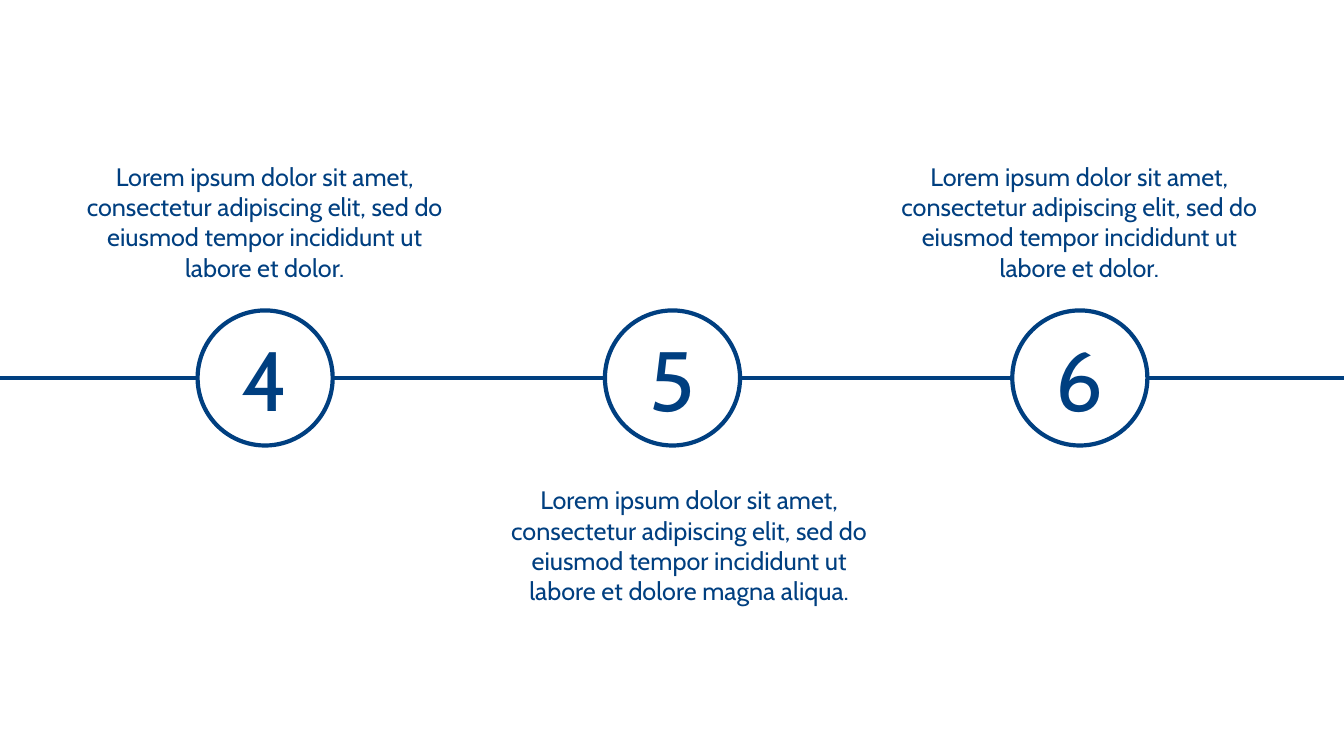
from lxml import etree
from pptx import Presentation
from pptx.dml.color import RGBColor
from pptx.enum.shapes import MSO_CONNECTOR, MSO_SHAPE
from pptx.enum.text import MSO_ANCHOR, MSO_AUTO_SIZE, PP_ALIGN
from pptx.oxml.ns import qn
from pptx.util import Inches, Pt

STRAIGHT = MSO_CONNECTOR.STRAIGHT
OVAL = MSO_SHAPE.OVAL
MIDDLE = MSO_ANCHOR.MIDDLE
GROW = MSO_AUTO_SIZE.SHAPE_TO_FIT_TEXT
CENTER = PP_ALIGN.CENTER

SLIDE_WIDTH, SLIDE_HEIGHT = 13.33, 7.5
AXIS_Y = SLIDE_HEIGHT / 2
DIAMETER = 1.34
FIRST_LEFT, STEP_PITCH = 1.96, 4.04
CAPTION_WIDTH, CAPTION_HEIGHT = 4.01, 1.36
ABOVE, BELOW = 1.55, 4.76

OPENING = ("Lorem ipsum dolor sit amet, consectetur adipiscing elit, "
           "sed do eiusmod tempor incididunt ut labore et ")
# Number, caption, caption left, caption top
STEPS = [
    ("4", OPENING + "dolor.", 0.62, ABOVE),
    ("5", OPENING + "dolore magna aliqua.", 4.83, BELOW),
    ("6", OPENING + "dolor.", 8.7, ABOVE),
]


def color(hex_code):
    return RGBColor.from_string(hex_code)


class Timeline:
    FONT = "Cabin"
    NAVY = "003F80"
    WHITE = "FFFFFF"
    STROKE = 3

    def __init__(self, slide):
        self.slide = slide
        background = slide.background.fill
        background.solid()
        background.fore_color.rgb = color(self.WHITE)

    def add_words(self, frame, words, size):
        frame.word_wrap = True
        paragraph = frame.paragraphs[0]
        paragraph.alignment = CENTER
        run = paragraph.add_run()
        run.text = words
        run.font.name = self.FONT
        run.font.size = Pt(size)
        run.font.color.rgb = color(self.NAVY)

    def stroke(self, line):
        line.color.rgb = color(self.NAVY)
        line.width = Pt(self.STROKE)

    def axis(self, y):
        axis = self.slide.shapes.add_connector(
            STRAIGHT, 0, Inches(y), Inches(SLIDE_WIDTH), Inches(y))
        self.stroke(axis.line)
        etree.SubElement(axis._element.spPr, qn("a:effectLst"))

    def marker(self, number, left, top):
        marker = self.slide.shapes.add_shape(
            OVAL, Inches(left), Inches(top), Inches(DIAMETER), Inches(DIAMETER))
        marker.shadow.inherit = False
        marker.fill.solid()
        marker.fill.fore_color.rgb = color(self.WHITE)
        self.stroke(marker.line)
        marker.text_frame.vertical_anchor = MIDDLE
        self.add_words(marker.text_frame, number, 60)

    def caption(self, words, left, top):
        caption = self.slide.shapes.add_textbox(
            Inches(left), Inches(top), Inches(CAPTION_WIDTH), Inches(CAPTION_HEIGHT))
        self.add_words(caption.text_frame, words, 18)
        caption.text_frame.auto_size = GROW


def main():
    deck = Presentation()
    deck.slide_width = Inches(SLIDE_WIDTH)
    deck.slide_height = Inches(SLIDE_HEIGHT)
    timeline = Timeline(deck.slides.add_slide(deck.slide_layouts[6]))

    # Line behind the markers
    timeline.axis(AXIS_Y)

    # Numbered steps with their captions
    for index, (number, words, caption_left, caption_top) in enumerate(STEPS):
        timeline.marker(number, FIRST_LEFT + index * STEP_PITCH, AXIS_Y - DIAMETER / 2)
        timeline.caption(words, caption_left, caption_top)

    deck.save("out.pptx")


if __name__ == "__main__":
    main()
